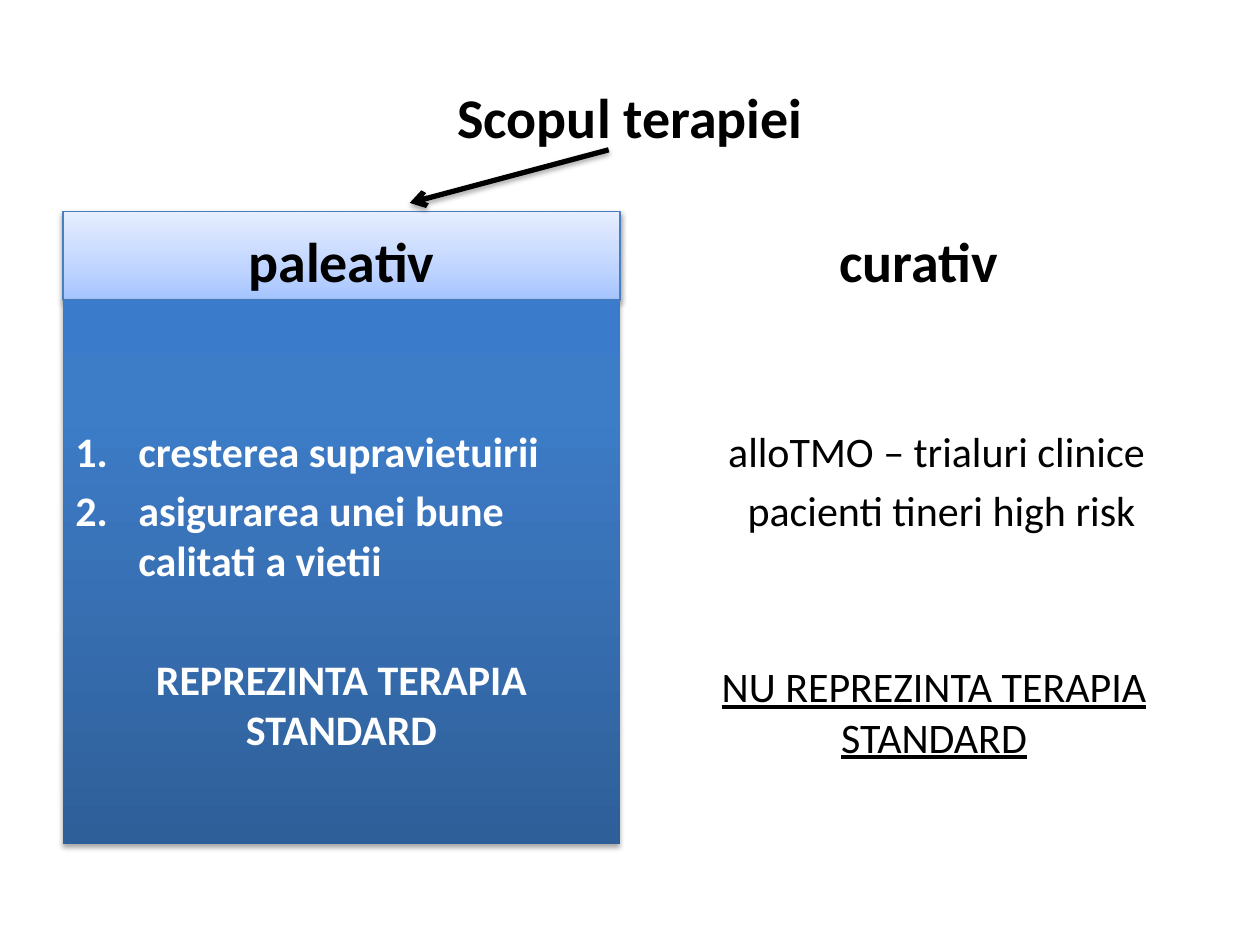
from lxml import etree
from pptx import Presentation
from pptx.dml.color import RGBColor
from pptx.enum import shapes, text
from pptx.oxml.ns import qn
from pptx.util import Cm, Pt

FONT = "Calibri"
HUE = {"ink": "000000", "pale": "FFFFFF", "edge": "4B7EBC"}
TITLE = "Scopul terapiei"
LIST = {"num": True, "indent": 1.27, "hang": 1.27}
CENTER = {"mid": True}
COLS = [
    {
        "left": 1.27, "wide": 11.23, "head": "paleativ", "hue": "pale", "bold": True,
        "lines": [
            ("cresterea supravietuirii", 0, LIST),
            ("asigurarea unei bune calitati a vietii", 4.8, LIST),
            ("REPREZINTA TERAPIA STANDARD", 39, CENTER),
        ],
        "fills": [
            [(0, "A4C4FF"), (35, "BFD4FF"), (100, "E6EEFF")],
            [(0, "2F5F99"), (80, "3D7CC7"), (100, "3A7CCB")],
        ],
    },
    {
        "left": 12.9, "wide": 11.86, "head": "curativ", "hue": "ink", "bold": False,
        "lines": [
            ("alloTMO – trialuri clinice", 0, {"indent": 1.53}),
            ("pacienti tineri high risk", 4.8, {"indent": 1.92}),
            ("NU REPREZINTA TERAPIA STANDARD", 72, {"mid": True, "under": True}),
        ],
        "fills": None,
    },
]
TOP, HEAD, BODY, GAP = 4.27, 1.78, 10.97, 2.53


def color(name):
    return RGBColor.from_string(HUE[name])


def node(up, tag, **attrs):
    return etree.SubElement(up, qn("a:" + tag), {k: str(v) for k, v in attrs.items()})


def style(para, size, hue, bold, mid=False, under=None):
    para.alignment = text.PP_ALIGN.CENTER if mid else text.PP_ALIGN.LEFT
    font = para.font
    font.name, font.size, font.bold, font.underline = FONT, Pt(size), bold, under
    font.color.rgb = color(hue)


def shade(effect, alpha, dist):
    drop = node(effect, "outerShdw", blurRad=Pt(3.1), dist=Pt(dist), dir=5400000,
                rotWithShape=0)
    node(node(drop, "srgbClr", val=HUE["ink"]), "alpha", val=alpha * 1000)


def blend(shape, stops):
    shape.fill.gradient()
    shape.fill.gradient_angle = 90
    ramp = shape.element.spPr.find(".//" + qn("a:gsLst"))
    for old in list(ramp):
        ramp.remove(old)
    for pos, tint in stops:
        node(node(ramp, "gs", pos=pos * 1000), "srgbClr", val=tint)


def box(slide, col, top, high, stops, alpha, dist):
    spot = Cm(col["left"]), Cm(top), Cm(col["wide"]), Cm(high)
    if stops:
        shape = slide.shapes.add_shape(shapes.MSO_SHAPE.RECTANGLE, *spot)
        blend(shape, stops)
        shape.line.fill.background()
        shape.shadow.inherit = False
        shade(shape.element.spPr.find(qn("a:effectLst")), alpha, dist)
    else:
        shape = slide.shapes.add_textbox(*spot)
    shape.text_frame.word_wrap = True
    return shape


def header(slide, col, stops):
    shape = box(slide, col, TOP, HEAD, stops, 38, 1.6)
    if stops:
        shape.line.color.rgb = color("edge")
        shape.line.width = Pt(0.75)
    frame = shape.text_frame
    frame.vertical_anchor = text.MSO_ANCHOR.BOTTOM
    frame.text = col["head"]
    style(frame.paragraphs[0], 32, "ink", True, True)


def body(slide, col, stops):
    frame = box(slide, col, TOP + HEAD, BODY, stops, 35, 1.8).text_frame
    frame.vertical_anchor = text.MSO_ANCHOR.TOP
    frame.margin_top = Cm(GAP)
    frame.text = "\n".join(words for words, _, _ in col["lines"])
    for para, (_, space, form) in zip(frame.paragraphs, col["lines"]):
        style(para, 24, col["hue"], col["bold"], form.get("mid", False), form.get("under"))
        para.space_before = Pt(space)
        props = para._p.get_or_add_pPr()
        props.set("marL", str(Cm(form.get("indent", 0))))
        props.set("indent", str(-Cm(form.get("hang", 0))))
        if form.get("num"):
            mark = node(props, "buAutoNum", type="arabicPeriod")
            props.find(qn("a:defRPr")).addprevious(mark)


def arrow(slide):
    line = slide.shapes.add_connector(
        shapes.MSO_CONNECTOR.STRAIGHT, Cm(12.27), Cm(3.02), Cm(8.26), Cm(4.09))
    line.line.color.rgb = color("ink")
    line.line.width = Pt(3)
    node(line.line._get_or_add_ln(), "tailEnd", type="arrow")
    shade(node(line.element.spPr, "effectLst"), 35, 1.8)


def main():
    deck = Presentation()
    deck.slide_width, deck.slide_height = Cm(25.4), Cm(19.05)
    slide = deck.slides.add_slide(deck.slide_layouts[5])
    title = slide.shapes.title
    title.left, title.top, title.width, title.height = Cm(1.27), Cm(0.76), Cm(22.86), Cm(3.18)
    title.text_frame.text = TITLE
    title.text_frame.vertical_anchor = text.MSO_ANCHOR.MIDDLE
    style(title.text_frame.paragraphs[0], 32, "ink", True, True)
    for col in COLS:
        top, low = col["fills"] or (None, None)
        header(slide, {**col, "wide": 11.23}, top)
        body(slide, col, low)
    arrow(slide)
    deck.save("out.pptx")


if __name__ == "__main__":
    main()
